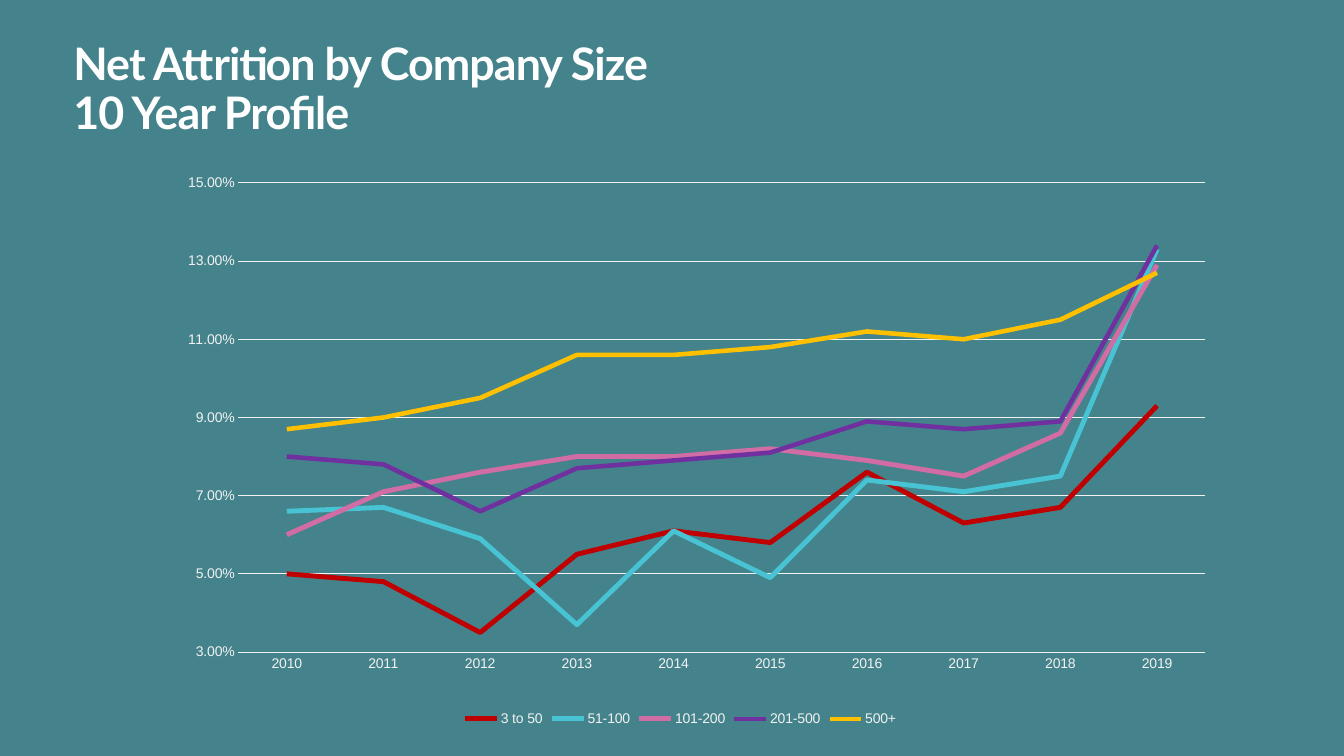
from lxml.etree import SubElement
from pptx import Presentation
from pptx.chart.data import CategoryChartData
from pptx.dml.color import RGBColor
from pptx.enum.chart import XL_CHART_TYPE as ChartType, XL_LEGEND_POSITION as LegendPosition
from pptx.enum.chart import XL_MARKER_STYLE as Marker, XL_TICK_MARK as TickMark
from pptx.enum.text import MSO_ANCHOR as Anchor
from pptx.oxml.ns import qn
from pptx.util import Inches, Pt

TITLE_LINES = ["Net Attrition by Company Size", "10 Year Profile"]
YEARS = [str(year) for year in range(2010, 2020)]
COMPANY_SIZES = [
    ("3 to 50", "red", 3.5, (0.05, 0.048, 0.035, 0.055, 0.061, 0.058, 0.076, 0.063, 0.067, 0.093)),
    ("51-100", "cyan", 3.5, (0.066, 0.067, 0.059, 0.037, 0.061, 0.049, 0.074, 0.071, 0.075, 0.133)),
    ("101-200", "pink", 3.5, (0.06, 0.071, 0.076, 0.08, 0.08, 0.082, 0.079, 0.075, 0.086, 0.129)),
    ("201-500", "purple", 3.25, (0.08, 0.078, 0.066, 0.077, 0.079, 0.081, 0.089, 0.087, 0.089, 0.134)),
    ("500+", "amber", 3.25, (0.087, 0.09, 0.095, 0.106, 0.106, 0.108, 0.112, 0.11, 0.115, 0.127)),
]
COLORS = {
    "background": "44838B", "title": "FFFFFF", "pale": "F2F2F2", "red": "C00000",
    "cyan": "47C3D3", "pink": "D16CA4", "purple": "7030A0", "amber": "FFC000",
}
TITLE_BOX = (0.63, 0.37, 9.4, 1.44)
CHART_BOX = (1.35, 1.6, 10.8, 5.65)
PLOT_LAYOUT = {
    "layoutTarget": "inner", "xMode": "edge", "yMode": "edge",
    "x": 0.094, "y": 0.038, "w": 0.888, "h": 0.824,
}


def color(name):
    return RGBColor.from_string(COLORS[name])


def inches(box):
    return [Inches(length) for length in box]


def style_line(line, name, width):
    line.color.rgb = color(name)
    line.width = Pt(width)


def style_font(font):
    font.name = "Arial"
    font.size = Pt(10)
    font.color.rgb = color("pale")


def add_title(slide):
    frame = slide.shapes.add_textbox(*inches(TITLE_BOX)).text_frame
    frame.word_wrap = True
    frame.vertical_anchor = Anchor.TOP
    heading = frame.paragraphs[0]
    heading.line_spacing = 0.9
    for index, words in enumerate(TITLE_LINES):
        if index:
            heading.add_line_break()
        run = heading.add_run()
        run.text = words
        run.font.name = "Lato"
        run.font.size = Pt(32)
        run.font.bold = True
        run.font.color.rgb = color("title")
        run._r.get_or_add_rPr().set("spc", "-70")


def place_plot(chart):
    plot_area = chart._chartSpace.chart.plotArea
    layout = plot_area.find(qn("c:layout"))
    if layout is None:
        layout = SubElement(plot_area, qn("c:layout"))
        plot_area.insert(0, layout)
    manual = SubElement(layout, qn("c:manualLayout"))
    for tag, value in PLOT_LAYOUT.items():
        SubElement(manual, qn(f"c:{tag}")).set("val", str(value))


def add_attrition_chart(slide):
    attrition = CategoryChartData(number_format="0.00%")
    attrition.categories = YEARS
    for size, _, _, rates in COMPANY_SIZES:
        attrition.add_series(size, rates)
    chart = slide.shapes.add_chart(ChartType.LINE, *inches(CHART_BOX), attrition).chart
    style_font(chart.font)
    chart.has_title = False
    chart.has_legend = True
    chart.legend.position = LegendPosition.BOTTOM
    chart.legend.include_in_layout = False
    style_font(chart.legend.font)
    place_plot(chart)

    plot = chart.plots[0]
    plot.vary_by_categories = False
    for series, (_, hue, width, _) in zip(plot.series, COMPANY_SIZES):
        series.smooth = False
        series.marker.style = Marker.NONE
        style_line(series.format.line, hue, width)

    years, rates = chart.category_axis, chart.value_axis
    for axis in (years, rates):
        axis.major_tick_mark = axis.minor_tick_mark = TickMark.NONE
        style_font(axis.tick_labels.font)
    style_line(years.format.line, "pale", 0.75)
    rates.minimum_scale, rates.maximum_scale, rates.major_unit = 0.03, 0.15, 0.02
    rates.tick_labels.number_format = "0.00%"
    rates.tick_labels.number_format_is_linked = False
    rates.format.line.fill.background()
    rates.has_major_gridlines = True
    style_line(rates.major_gridlines.format.line, "pale", 0.75)


def main():
    """Build the net attrition slide."""
    deck = Presentation()
    deck.slide_width, deck.slide_height = inches((13.33, 7.5))
    slide = deck.slides.add_slide(deck.slide_layouts[6])
    slide.background.fill.solid()
    slide.background.fill.fore_color.rgb = color("background")
    add_title(slide)
    add_attrition_chart(slide)
    deck.save("out.pptx")


if __name__ == "__main__":
    main()
